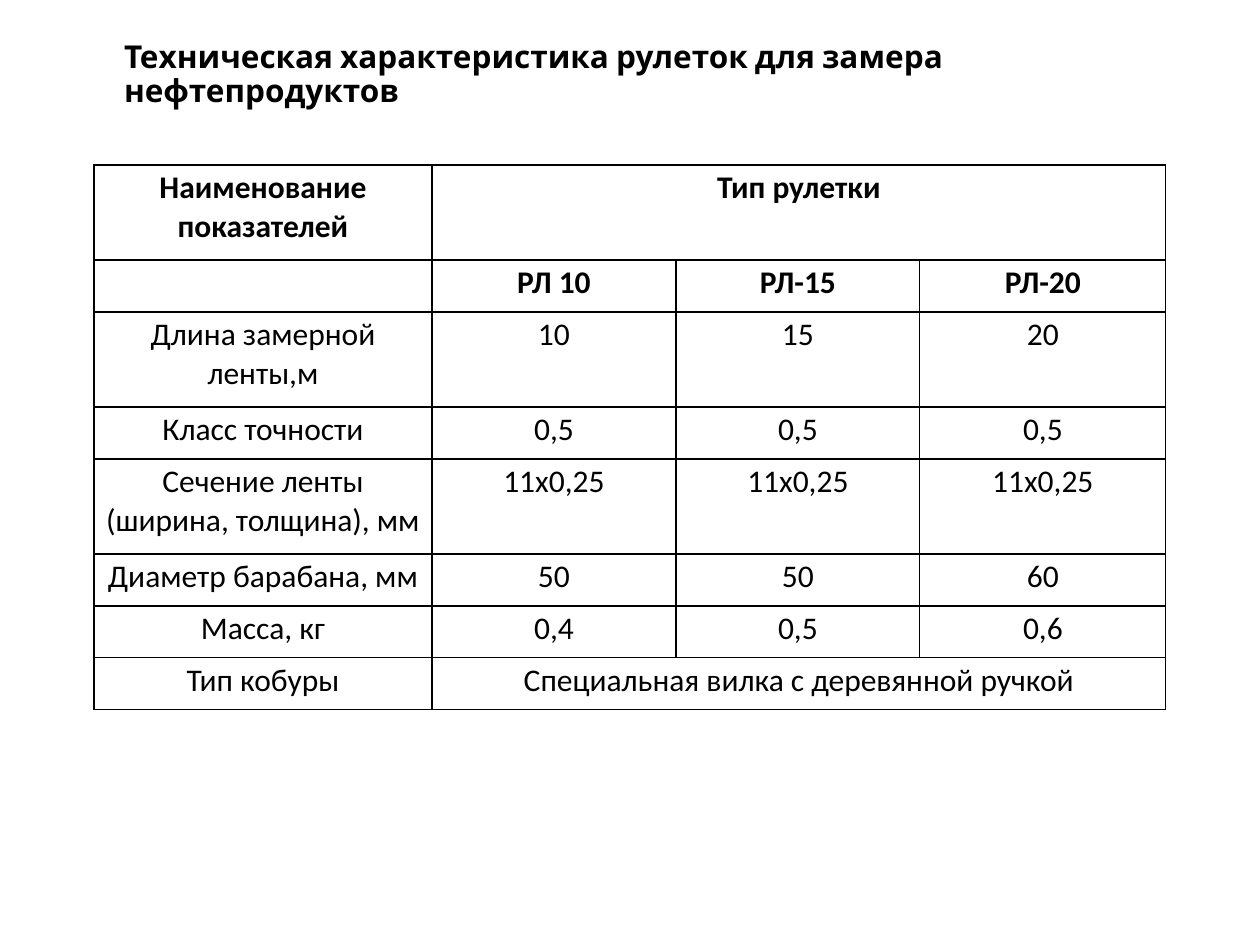
"""Build a slide with the technical data of measuring tapes for oil products."""
from dataclasses import dataclass

from lxml.etree import SubElement
from pptx import Presentation
from pptx.dml.color import RGBColor
from pptx.enum.text import MSO_ANCHOR, MSO_AUTO_SIZE, PP_ALIGN
from pptx.oxml.ns import qn
from pptx.util import Emu, Pt

COLORS = {"text": "000000", "border": "000000", "background": "FFFFFF"}
BORDER_WIDTH = Pt(0.75)
FONT_SIZE = Pt(18)
CELL_INSET = 4
COLUMN_WIDTHS = (338, 244, 244, 246)
SINGLE_HEIGHT, DOUBLE_HEIGHT = 52, 95


@dataclass(frozen=True)
class TapeRow:
    texts: tuple[str, ...]
    height: int = SINGLE_HEIGHT
    bold: bool = False


ROWS = (
    TapeRow(("Наименование показателей", "Тип рулетки"), DOUBLE_HEIGHT, True),
    TapeRow(("", "РЛ 10", "РЛ-15", "РЛ-20"), bold=True),
    TapeRow(("Длина замерной ленты,м", "10", "15", "20"), DOUBLE_HEIGHT),
    TapeRow(("Класс точности", "0,5", "0,5", "0,5")),
    TapeRow(("Сечение ленты (ширина, толщина), мм",) + ("11x0,25",) * 3, DOUBLE_HEIGHT),
    TapeRow(("Диаметр барабана, мм", "50", "50", "60")),
    TapeRow(("Масса, кг", "0,4", "0,5", "0,6")),
    TapeRow(("Тип кобуры", "Специальная вилка с деревянной ручкой")),
)


def px(length: int) -> Emu:
    return Emu(round(length * 914400 / 126))


def format_runs(paragraph, font_name: str, bold: bool) -> None:
    for run in paragraph.runs:
        run.font.name = font_name
        run.font.size = FONT_SIZE
        run.font.bold = bold
        run.font.color.rgb = RGBColor.from_string(COLORS["text"])


def add_borders(cell) -> None:
    properties = cell._tc.get_or_add_tcPr()
    for side in ("L", "R", "T", "B"):
        line = SubElement(properties, qn(f"a:ln{side}"), w=str(BORDER_WIDTH))
        fill = SubElement(line, qn("a:solidFill"))
        SubElement(fill, qn("a:srgbClr"), val=COLORS["border"])


def format_cell(cell) -> None:
    cell.margin_left = cell.margin_right = px(CELL_INSET)
    cell.margin_top = cell.margin_bottom = px(CELL_INSET)
    cell.vertical_anchor = MSO_ANCHOR.TOP
    add_borders(cell)
    cell.fill.solid()
    cell.fill.fore_color.rgb = RGBColor.from_string(COLORS["background"])


def format_title(title) -> None:
    title.left, title.top, title.width, title.height = px(124), px(55), px(1071), px(88)
    frame = title.text_frame
    frame.text = "Техническая характеристика\u00a0рулеток для замера нефтепродуктов"
    frame.word_wrap = True
    frame.auto_size = MSO_AUTO_SIZE.NONE
    frame.vertical_anchor = MSO_ANCHOR.MIDDLE
    frame.margin_left = frame.margin_right = frame.margin_top = 0
    frame.margin_bottom = px(47)
    paragraph = frame.paragraphs[0]
    paragraph.alignment = PP_ALIGN.LEFT
    paragraph.line_spacing = 0.9
    format_runs(paragraph, "Cabin", True)


def add_tape_table(slide, rows: tuple[TapeRow, ...]) -> None:
    width, height = sum(COLUMN_WIDTHS), sum(row.height for row in rows)
    table = slide.shapes.add_table(
        len(rows), len(COLUMN_WIDTHS), px(94), px(165), px(width), px(height)
    ).table
    table.first_row = table.horz_banding = False
    for column, column_width in zip(table.columns, COLUMN_WIDTHS):
        column.width = px(column_width)
    for index, row in enumerate(rows):
        table.rows[index].height = px(row.height)
        for cell in table.rows[index].cells:
            format_cell(cell)
        if len(row.texts) < len(COLUMN_WIDTHS):
            table.cell(index, 1).merge(table.cell(index, len(COLUMN_WIDTHS) - 1))
        for column_index, text in enumerate(row.texts):
            frame = table.cell(index, column_index).text_frame
            frame.text = text
            frame.paragraphs[0].alignment = PP_ALIGN.CENTER
            format_runs(frame.paragraphs[0], "Calibri", row.bold)


def main() -> None:
    presentation = Presentation()
    presentation.slide_width, presentation.slide_height = px(1260), px(945)
    slide = presentation.slides.add_slide(presentation.slide_layouts[5])
    add_tape_table(slide, ROWS)
    format_title(slide.shapes.title)
    presentation.save("out.pptx")


if __name__ == "__main__":
    main()
